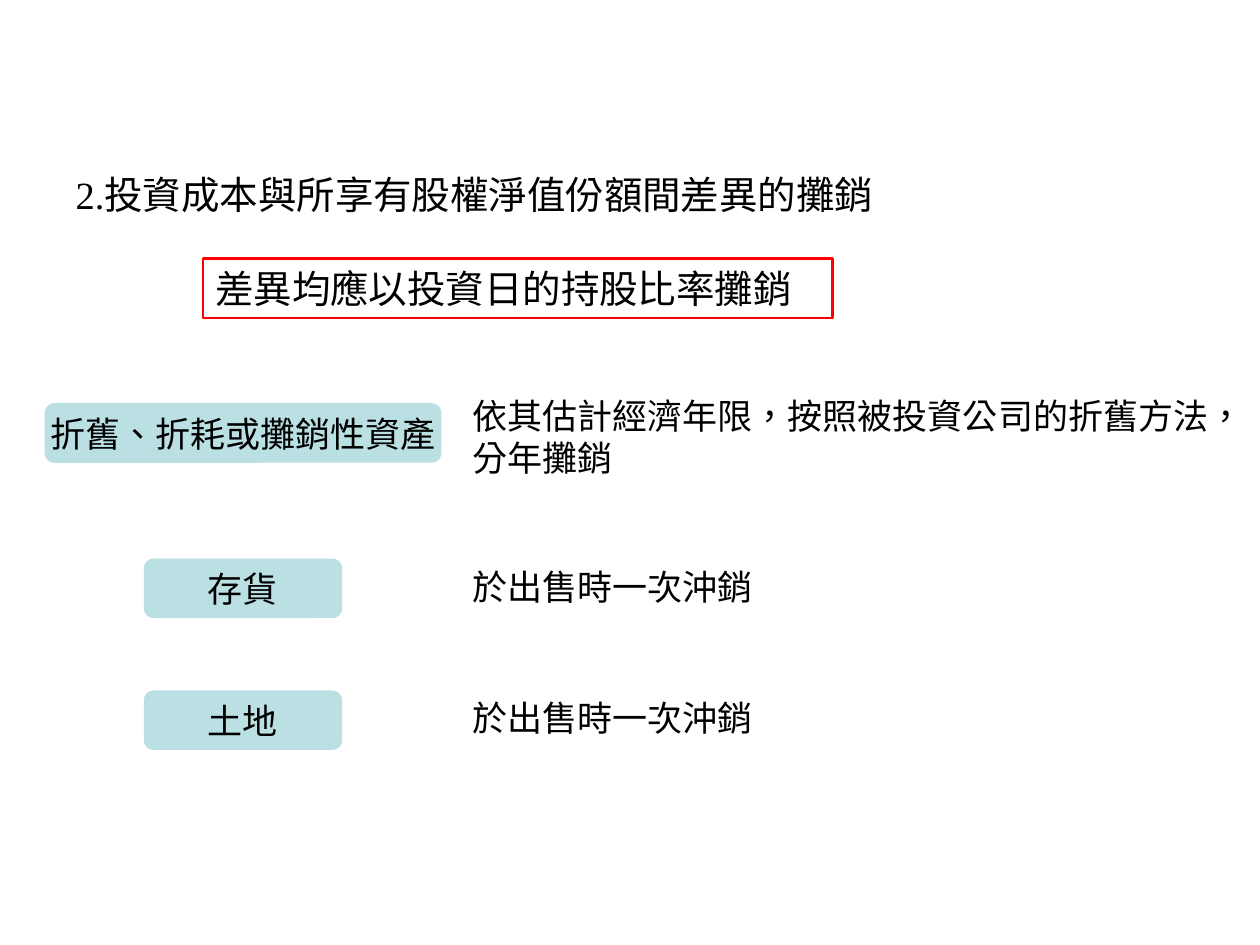
from pptx import Presentation
from pptx.dml.color import RGBColor
from pptx.enum.lang import MSO_LANGUAGE_ID
from pptx.enum.shapes import MSO_SHAPE
from pptx.enum.text import MSO_ANCHOR, PP_ALIGN
from pptx.util import Cm, Pt

ROUNDED, RECT = MSO_SHAPE.ROUNDED_RECTANGLE, MSO_SHAPE.RECTANGLE
TOP, MIDDLE = MSO_ANCHOR.TOP, MSO_ANCHOR.MIDDLE
LEFT, CENTER = PP_ALIGN.LEFT, PP_ALIGN.CENTER
CHINESE = MSO_LANGUAGE_ID.TRADITIONAL_CHINESE
SERIF, SANS = "Times New Roman", "Noto Sans CJK SC"


def color(value):
    return RGBColor.from_string(value)


def write(sp, text, size, name=SERIF, align=LEFT, anchor=TOP, wrap=True):
    tf = sp.text_frame
    tf.word_wrap, tf.vertical_anchor = wrap, anchor
    p = tf.paragraphs[0]
    p.alignment = align
    r = p.add_run()
    r.text = text
    font = {"size": Pt(size), "name": name, "bold": False, "language_id": CHINESE}
    for key, value in font.items():
        setattr(r.font, key, value)
    r.font.color.rgb = color("000000")


prs = Presentation()
prs.slide_width, prs.slide_height = Cm(25.4), Cm(19.05)
s = prs.slides.add_slide(prs.slide_layouts[5])

# Heading
title = s.shapes.title
place = {"left": 1.27, "top": 3.33, "width": 22.86, "height": 1.4}
for key, value in place.items():
    setattr(title, key, Cm(value))
write(title, "2.投資成本與所享有股權淨值份額間差異的攤銷", 22)

# Asset types, each with its amortization rule
label_center, label_height, rule_left = 4.9, 1.2, 9.27
rows = [
    # label, label width, label top, rule, rule top, rule width, rule height
    ("折舊、折耗或攤銷性資產", 8, 8.13,
     "依其估計經濟年限，按照被投資公司的折舊方法，分年攤銷", 7.82, 15.6, 1.96),
    ("存貨", 4, 11.26, "於出售時一次沖銷", 11.28, 7.19, 1.12),
    ("土地", 4, 13.92, "於出售時一次沖銷", 13.92, 7.19, 1.12),
]
for label, width, top, rule, rule_top, rule_width, rule_height in rows:
    group = s.shapes.add_group_shape()
    sp = group.shapes.add_shape(ROUNDED, Cm(label_center - width / 2), Cm(top),
                                Cm(width), Cm(label_height))
    sp.shadow.inherit = False
    sp.fill.solid()
    sp.fill.fore_color.rgb = color("BBE0E3")
    sp.line.fill.background()
    write(sp, label, 20, SANS, CENTER, MIDDLE, False)
    box = group.shapes.add_textbox(Cm(rule_left), Cm(rule_top),
                                   Cm(rule_width), Cm(rule_height))
    write(box, rule, 20)

# Key principle in a red frame
frame = s.shapes.add_shape(RECT, Cm(4.09), Cm(5.21), Cm(12.7), Cm(1.2))
frame.shadow.inherit = False
frame.fill.background()
frame.line.color.rgb = color("FF0000")
frame.line.width = Pt(1.5)
write(frame, "差異均應以投資日的持股比率攤銷", 22)

prs.save("out.pptx")
